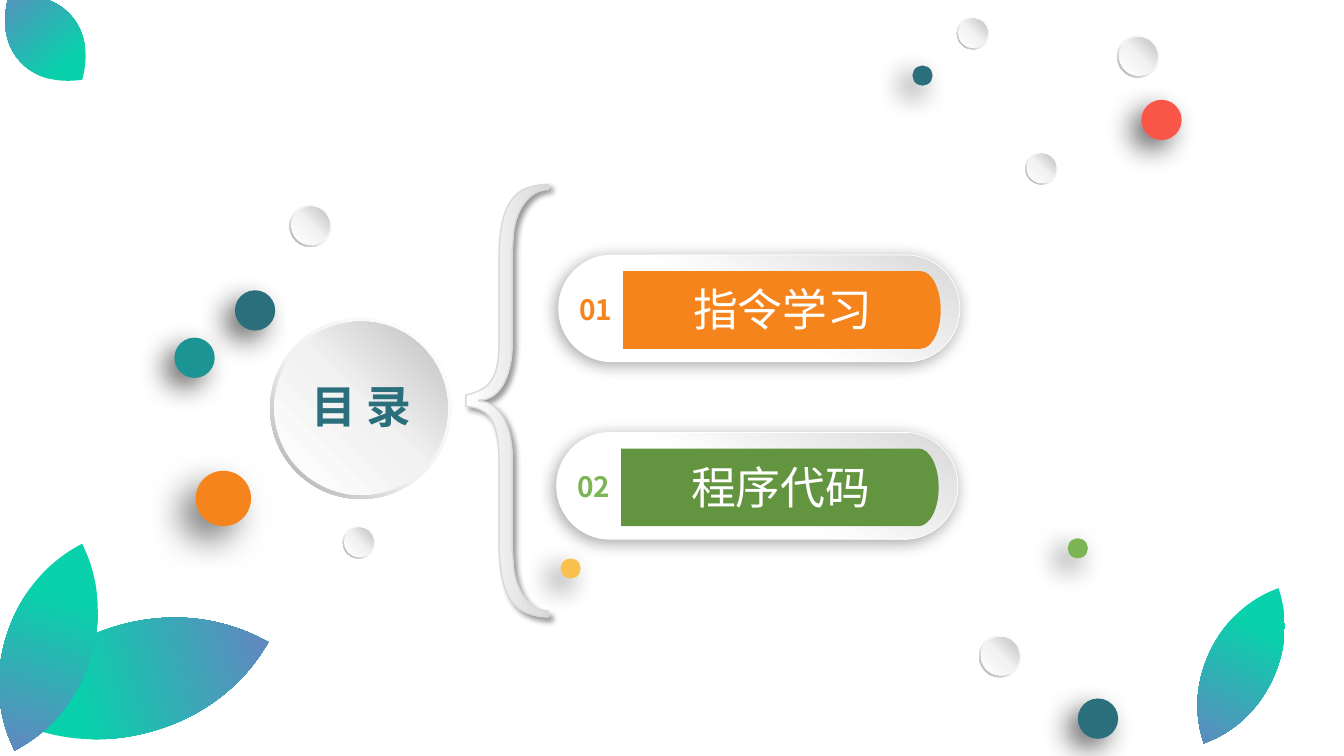
from dataclasses import dataclass

from lxml.etree import SubElement
from pptx import Presentation
from pptx.dml.color import RGBColor
from pptx.enum.shapes import MSO_SHAPE
from pptx.enum.text import MSO_ANCHOR, MSO_AUTO_SIZE, PP_ALIGN
from pptx.oxml.ns import qn
from pptx.util import Inches, Pt

FONT = "Noto Sans CJK SC"
WHITE = RGBColor(0xFF, 0xFF, 0xFF)
BLACK = RGBColor(0x00, 0x00, 0x00)
PALE = RGBColor(0xF2, 0xF2, 0xF2)
LIGHT = RGBColor(0xD9, 0xD9, 0xD9)
SILVER = RGBColor(0xBF, 0xBF, 0xBF)
GRAY = RGBColor(0xA6, 0xA6, 0xA6)
NAVY = RGBColor(0x2B, 0x6F, 0x7D)
TEAL = RGBColor(0x1C, 0x94, 0x94)
ORANGE = RGBColor(0xF5, 0x84, 0x1C)
RED = RGBColor(0xF9, 0x56, 0x47)
YELLOW = RGBColor(0xFA, 0xC1, 0x4D)
LIME = RGBColor(0x7C, 0xB5, 0x54)
GREEN = RGBColor(0x63, 0x95, 0x41)
MINT = RGBColor(0x09, 0xD1, 0xAB)
VIOLET = RGBColor(0x6E, 0x7D, 0xC3)


@dataclass
class Gradient:
    stops: list[tuple[int, RGBColor]]
    angle: int


@dataclass
class Shadow:
    alpha: int
    blur: int
    distance: int
    angle: int


@dataclass
class Coin:
    left: float
    top: float
    size: float
    face: float


@dataclass
class Bead:
    left: float
    top: float
    size: float
    color: RGBColor
    shadow: Shadow


@dataclass
class Leaf:
    left: float
    top: float
    width: float
    height: float
    rotation: float


@dataclass
class Panel:
    left: float
    top: float
    number: str
    label: str
    number_color: RGBColor
    bar_color: RGBColor


RIM = Gradient([(0, WHITE), (55, PALE), (100, GRAY)], 135)
FACE = Gradient([(0, WHITE), (51, PALE), (100, SILVER)], 315)
PILL = Gradient([(45, WHITE), (100, LIGHT)], 300)
BRACE = Gradient([(0, WHITE), (100, LIGHT)], 0)
FOLIAGE = Gradient([(0, MINT), (31, MINT), (100, VIOLET)], 90)
BEAD_SHADOW = Shadow(60, 20, 10, 135)

HUB = Coin(2.68, 3.15, 1.8, 1.72)
COINS = [
    Coin(9.49, 0.17, 0.32, 0.29), Coin(11.08, 0.35, 0.42, 0.38),
    Coin(3.4, 5.22, 0.32, 0.29), Coin(10.17, 1.51, 0.32, 0.29),
    Coin(9.71, 6.3, 0.42, 0.38), Coin(2.87, 2.03, 0.42, 0.38),
]
BEADS = [
    Bead(11.32, 0.99, 0.4, RED, BEAD_SHADOW),
    Bead(9.05, 0.65, 0.2, NAVY, BEAD_SHADOW),
    Bead(2.33, 2.88, 0.4, NAVY, BEAD_SHADOW),
    Bead(5.56, 5.54, 0.2, YELLOW, BEAD_SHADOW),
    Bead(1.94, 4.67, 0.55, ORANGE, Shadow(50, 25, 15, 135)),
    Bead(10.69, 6.93, 0.4, NAVY, BEAD_SHADOW),
    Bead(1.73, 3.35, 0.4, TEAL, BEAD_SHADOW),
    Bead(10.59, 5.34, 0.2, LIME, BEAD_SHADOW),
]
LEAVES = [
    Leaf(0.79, 5.36, 1.1, 2.74, 254.8), Leaf(0.05, 5.34, 0.86, 2.16, 18.1),
    Leaf(11.97, 5.75, 0.68, 1.71, 25.7), Leaf(0.11, -0.17, 0.68, 1.1, 138.3),
]
PANELS = [
    Panel(5.54, 2.53, "01", "指令学习", ORANGE, ORANGE),
    Panel(5.52, 4.29, "02", "程序代码", LIME, GREEN),
]
BAR_OUTLINE = [
    (0, 0), (2.95, 0), (3.06, 0, 3.15, 0.17, 3.15, 0.39),
    (3.15, 0.6, 3.06, 0.77, 2.95, 0.77), (0, 0.77),
]
BRACE_OUTLINE = [
    (5.44, 1.83), (5.44, 1.88), (5.25, 1.88, 5.1, 2.09, 5.09, 2.36),
    (5.08, 2.49), (5.08, 3.42), (5.08, 3.67, 4.99, 3.97, 4.75, 3.97),
    (4.75, 3.98), (4.98, 3.98, 5.08, 4.28, 5.08, 4.52), (5.08, 5.45),
    (5.09, 5.58), (5.1, 5.85, 5.25, 6.06, 5.43, 6.06), (5.44, 6.06),
    (5.44, 6.12), (5.27, 6.12, 5.14, 6.06, 5.07, 5.96),
    (4.99, 5.85, 4.95, 5.65, 4.95, 5.38), (4.95, 4.56),
    (4.95, 4.41, 4.93, 4.29, 4.89, 4.19), (4.85, 4.1, 4.76, 4.04, 4.62, 4.03),
    (4.62, 3.92), (4.75, 3.89, 4.84, 3.84, 4.88, 3.76),
    (4.93, 3.69, 4.95, 3.56, 4.95, 3.38), (4.95, 2.57),
    (4.95, 2.29, 4.99, 2.1, 5.07, 1.99), (5.14, 1.88, 5.27, 1.83, 5.44, 1.83),
]


def paint(sp, fill: RGBColor | Gradient, shadow: Shadow | None = None,
          line: RGBColor | None = None, width: float = 1) -> None:
    if isinstance(fill, Gradient):
        sp.fill.gradient()
        sp.fill.gradient_angle = -fill.angle % 360
        stops = sp._element.spPr.find(qn("a:gradFill")).find(qn("a:gsLst"))
        for stop in list(stops):
            stops.remove(stop)
        for position, color in fill.stops:
            stop = SubElement(stops, qn("a:gs"), pos=str(position * 1000))
            SubElement(stop, qn("a:srgbClr"), val=str(color))
    else:
        sp.fill.solid()
        sp.fill.fore_color.rgb = fill
    if line is None:
        sp.line.fill.background()
    else:
        sp.line.color.rgb = line
        sp.line.width = Pt(width)
    sp.shadow.inherit = False
    if shadow:
        effects = sp._element.spPr.find(qn("a:effectLst"))
        outer = SubElement(effects, qn("a:outerShdw"), blurRad=str(Pt(shadow.blur)),
                           dist=str(Pt(shadow.distance)), dir=str(shadow.angle * 60000),
                           algn="ctr", rotWithShape="0")
        color = SubElement(outer, qn("a:srgbClr"), val=str(BLACK))
        SubElement(color, qn("a:alpha"), val=str(shadow.alpha * 1000))


def add_preset(s, kind: MSO_SHAPE, left: float, top: float, width: float, height: float):
    return s.shapes.add_shape(kind, Inches(left), Inches(top), Inches(width), Inches(height))


def add_outline(s, outline: list[tuple], left: float = 0, top: float = 0,
                x_scale: float = 1, y_scale: float = 1):
    steps = [[(Inches(left + x * x_scale), Inches(top + y * y_scale))
              for x, y in zip(step[::2], step[1::2])] for step in outline]
    builder = s.shapes.build_freeform(*steps[0][0])
    builder.add_line_segments([step[-1] for step in steps[1:]], close=True)
    sp = builder.convert_to_shape()
    segments = list(sp._element.spPr.iter(qn("a:lnTo")))
    for segment, step in zip(segments, steps[1:]):
        if len(step) == 3:
            segment.tag = qn("a:cubicBezTo")
            segment.remove(segment[0])
            for x, y in step:
                SubElement(segment, qn("a:pt"), x=str(x - sp.left), y=str(y - sp.top))
    return sp


def write(sp, text: str, size: int, color: RGBColor, bold: bool, wrap: bool = True) -> None:
    tf = sp.text_frame
    tf.word_wrap = wrap
    tf.auto_size = MSO_AUTO_SIZE.SHAPE_TO_FIT_TEXT
    tf.vertical_anchor = MSO_ANCHOR.TOP
    p = tf.paragraphs[0]
    p.alignment = PP_ALIGN.CENTER
    r = p.add_run()
    r.text = text
    r.font.size = Pt(size)
    r.font.bold = bold
    r.font.color.rgb = color
    r.font.name = FONT
    SubElement(r.font._element, qn("a:ea"), typeface=FONT)


def add_text(s, left: float, top: float, width: float, height: float, *style) -> None:
    sp = s.shapes.add_textbox(Inches(left), Inches(top), Inches(width), Inches(height))
    write(sp, *style)


def add_coin(s, coin: Coin) -> None:
    rim = add_preset(s, MSO_SHAPE.DONUT, coin.left, coin.top, coin.size, coin.size)
    rim.adjustments[0] = 0.049
    paint(rim, RIM)
    inset = (coin.size - coin.face) / 2
    face = add_preset(s, MSO_SHAPE.OVAL, coin.left + inset, coin.top + inset,
                      coin.face, coin.face)
    paint(face, FACE)


def add_title(s) -> None:
    sp = s.shapes.title
    sp.left, sp.top, sp.width, sp.height = (Inches(v) for v in (2.8, 3.76, 1.57, 0.54))
    tf = sp.text_frame
    tf.margin_left = tf.margin_top = tf.margin_right = tf.margin_bottom = 0
    write(sp, "目 录", 32, NAVY, True)
    sp._element.getparent().append(sp._element)


def add_panel(s, panel: Panel) -> None:
    pill = add_preset(s, MSO_SHAPE.ROUNDED_RECTANGLE, panel.left, panel.top, 3.98, 1.06)
    pill.adjustments[0] = 0.5
    paint(pill, PILL, Shadow(34, 12, 3, 135), WHITE, 0.5)
    paint(add_outline(s, BAR_OUTLINE, panel.left + 0.64, panel.top + 0.16), panel.bar_color)
    add_text(s, panel.left + 0.1, panel.top + 0.32, 0.54, 0.44,
             panel.number, 20, panel.number_color, True, False)
    add_text(s, panel.left + 1.12, panel.top + 0.22, 2.21, 0.64,
             panel.label, 32, WHITE, False)


def add_leaf(s, leaf: Leaf) -> None:
    half = [(0, -1), (-0.16, -0.93), (-0.68, -0.69, -1, -0.37, -1, 0),
            (-1, 0.37, -0.68, 0.69, -0.16, 0.93)]
    outline = half + [tuple(-v for v in step) for step in half]
    rx, ry = leaf.width / 2, leaf.height / 2
    sp = add_outline(s, outline, leaf.left + rx, leaf.top + ry, rx, ry)
    sp.rotation = leaf.rotation
    paint(sp, FOLIAGE)


def main() -> None:
    prs = Presentation()
    prs.slide_width, prs.slide_height = Inches(13.33), Inches(7.5)
    s = prs.slides.add_slide(prs.slide_layouts[5])
    add_coin(s, HUB)
    add_title(s)
    paint(add_outline(s, BRACE_OUTLINE), BRACE, Shadow(40, 4, 3, 45), LIGHT)
    for panel in PANELS:
        add_panel(s, panel)
    for leaf in LEAVES:
        add_leaf(s, leaf)
    for bead in BEADS:
        sp = add_preset(s, MSO_SHAPE.OVAL, bead.left, bead.top, bead.size, bead.size)
        paint(sp, bead.color, bead.shadow)
    for coin in COINS:
        add_coin(s, coin)
    prs.save("out.pptx")


if __name__ == "__main__":
    main()
